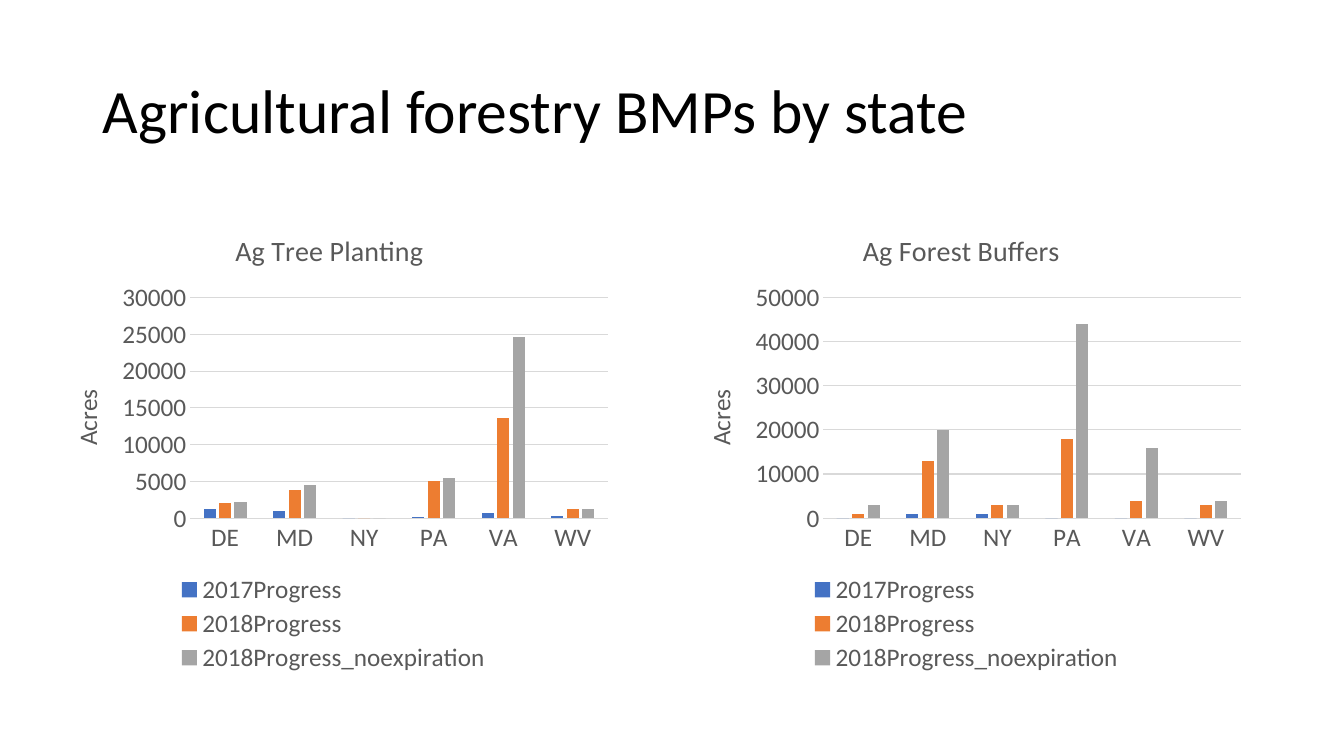
from pptx import Presentation
from pptx.chart.data import CategoryChartData
from pptx.dml.color import RGBColor
from pptx.enum.chart import XL_CHART_TYPE, XL_LEGEND_POSITION, XL_TICK_MARK
from pptx.enum.text import MSO_ANCHOR, PP_ALIGN
from pptx.oxml import parse_xml
from pptx.oxml.ns import nsdecls, qn
from pptx.util import Inches, Pt

BLACK = RGBColor(0x00, 0x00, 0x00)
GRAY = RGBColor(0x59, 0x59, 0x59)
RULE = RGBColor(0xD9, 0xD9, 0xD9)
BLUE = RGBColor(0x44, 0x72, 0xC4)
ORANGE = RGBColor(0xED, 0x7D, 0x31)
SILVER = RGBColor(0xA5, 0xA5, 0xA5)
FONT = "Calibri"

STATES = ["DE", "MD", "NY", "PA", "VA", "WV"]
SERIES = [("2017Progress", BLUE), ("2018Progress", ORANGE),
          ("2018Progress_noexpiration", SILVER)]
TREE_PLANTING = [
    [1300, 1000, 0, 100, 700, 300],
    [2100, 3800, 0, 5000, 13600, 1200],
    [2200, 4500, 0, 5500, 24600, 1300],
]
FOREST_BUFFERS = [
    [0, 1000, 1000, 0, 0, 0],
    [1000, 13000, 3000, 18000, 4000, 3000],
    [3000, 20000, 3000, 44000, 16000, 4000],
]


def style_font(font, size, color):
    font.name = FONT
    font.size = Pt(size)
    font.bold = False
    font.color.rgb = color


def set_layout(el, index, target=None, **fractions):
    for old in el.findall(qn("c:layout")):
        el.remove(old)
    tags = f'<c:layoutTarget val="{target}"/>' if target else ""
    tags += "".join(f'<c:{k}Mode val="edge"/>' for k in "xy")
    tags += "".join(f'<c:{k} val="{v}"/>' for k, v in fractions.items())
    el.insert(index, parse_xml(
        f'<c:layout {nsdecls("c")}><c:manualLayout>{tags}</c:manualLayout></c:layout>'))


def set_title(owner, text, size):
    tf = owner.text_frame
    tf.text = text
    style_font(tf.paragraphs[0].runs[0].font, size, GRAY)


def add_title(s, left, top, width, height):
    sp = s.shapes.title
    sp.left, sp.top, sp.width, sp.height = map(Inches, (left, top, width, height))
    tf = sp.text_frame
    tf.text = "Agricultural forestry BMPs by state"
    tf.vertical_anchor = MSO_ANCHOR.MIDDLE
    tf.word_wrap = True
    p = tf.paragraphs[0]
    p.alignment = PP_ALIGN.LEFT
    p.line_spacing = 0.9
    style_font(p.runs[0].font, 44, BLACK)


def add_acres_chart(s, left, top, width, height, title, title_x, rows, top_value, step):
    data = CategoryChartData()
    data.categories = STATES
    for (name, _), values in zip(SERIES, rows):
        data.add_series(name, values)
    chart = s.shapes.add_chart(
        XL_CHART_TYPE.COLUMN_CLUSTERED, *map(Inches, (left, top, width, height)), data).chart
    style_font(chart.font, 18, GRAY)
    set_title(chart.chart_title, title, 20)
    chart.chart_title.include_in_layout = False
    set_layout(chart.chart_title._element, 1, x=title_x, y=0.05)

    plot = chart.plots[0]
    plot.gap_width = 219
    plot.overlap = -27
    plot.vary_by_categories = False
    for series, (_, color) in zip(plot.series, SERIES):
        series.invert_if_negative = False
        series.format.fill.solid()
        series.format.fill.fore_color.rgb = color
    set_layout(chart._chartSpace.chart.plotArea, 0, "inner", x=0.25, y=0.2, w=0.73, h=0.46)

    cat, val = chart.category_axis, chart.value_axis
    for axis in (cat, val):
        axis.major_tick_mark = XL_TICK_MARK.NONE
        axis.minor_tick_mark = XL_TICK_MARK.NONE
        style_font(axis.tick_labels.font, 18, GRAY)
    val.minimum_scale = 0
    val.maximum_scale = top_value
    val.major_unit = step
    val.format.line.fill.background()
    for line in (cat.format.line, val.major_gridlines.format.line):
        line.color.rgb = RULE
        line.width = Pt(0.75)
    set_title(val.axis_title, "Acres", 18)

    chart.has_legend = True
    legend = chart.legend
    legend.position = XL_LEGEND_POSITION.BOTTOM
    legend.include_in_layout = False
    style_font(legend.font, 18, GRAY)
    set_layout(legend._element, 1, x=0.22, y=0.77, w=0.56, h=0.22)


def main():
    prs = Presentation()
    prs.slide_width = Inches(13.33)
    prs.slide_height = Inches(7.5)
    s = prs.slides.add_slide(prs.slide_layouts[5])
    add_title(s, 0.92, 0.4, 11.5, 1.45)
    charts = [
        ("Ag Tree Planting", 0.32, TREE_PLANTING, 30000, 5000),
        ("Ag Forest Buffers", 0.31, FOREST_BUFFERS, 50000, 10000),
    ]
    for i, chart in enumerate(charts):
        add_acres_chart(s, 0.47 + i * 6.28, 2, 5.67, 4.76, *chart)
    prs.save("out.pptx")


if __name__ == "__main__":
    main()
